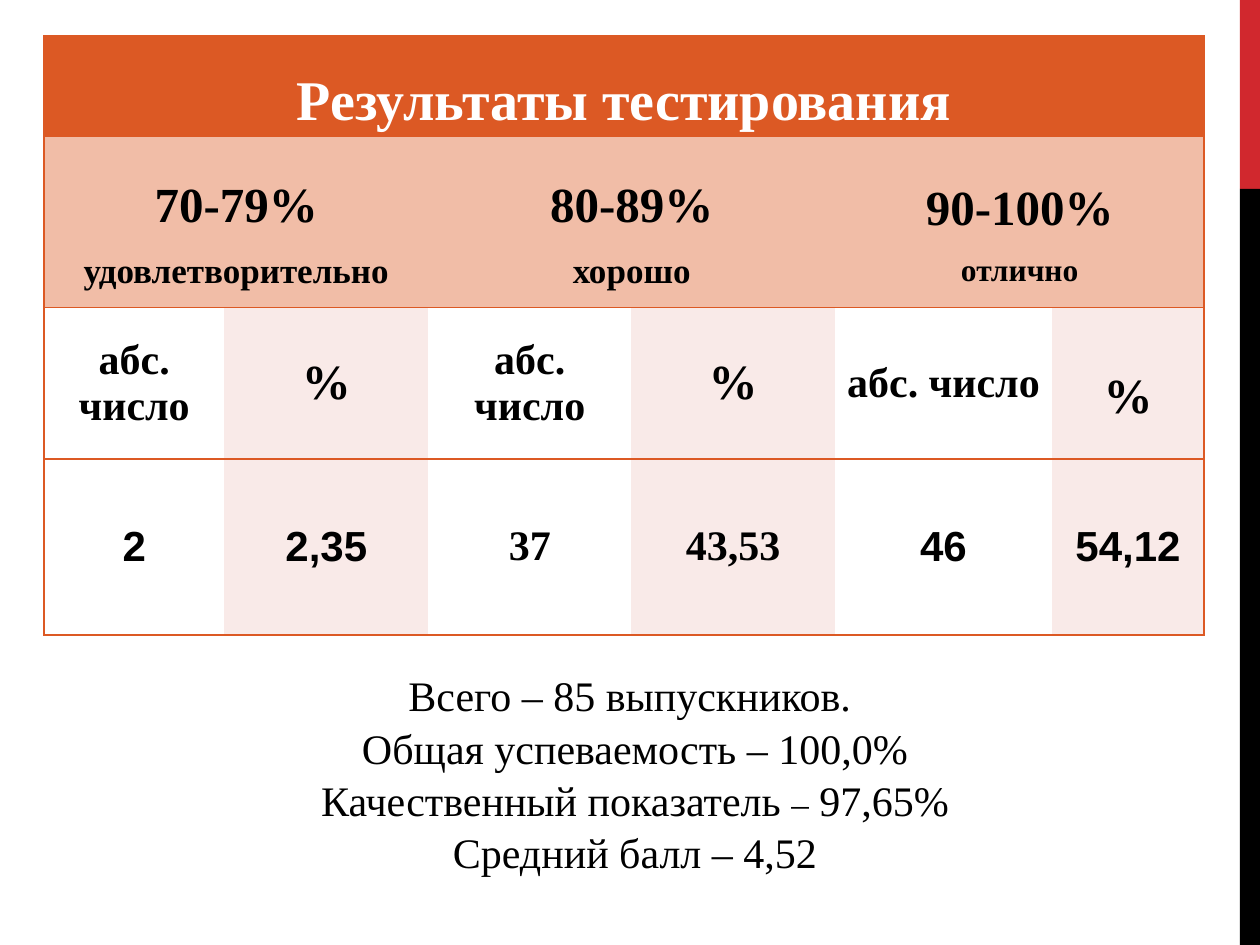
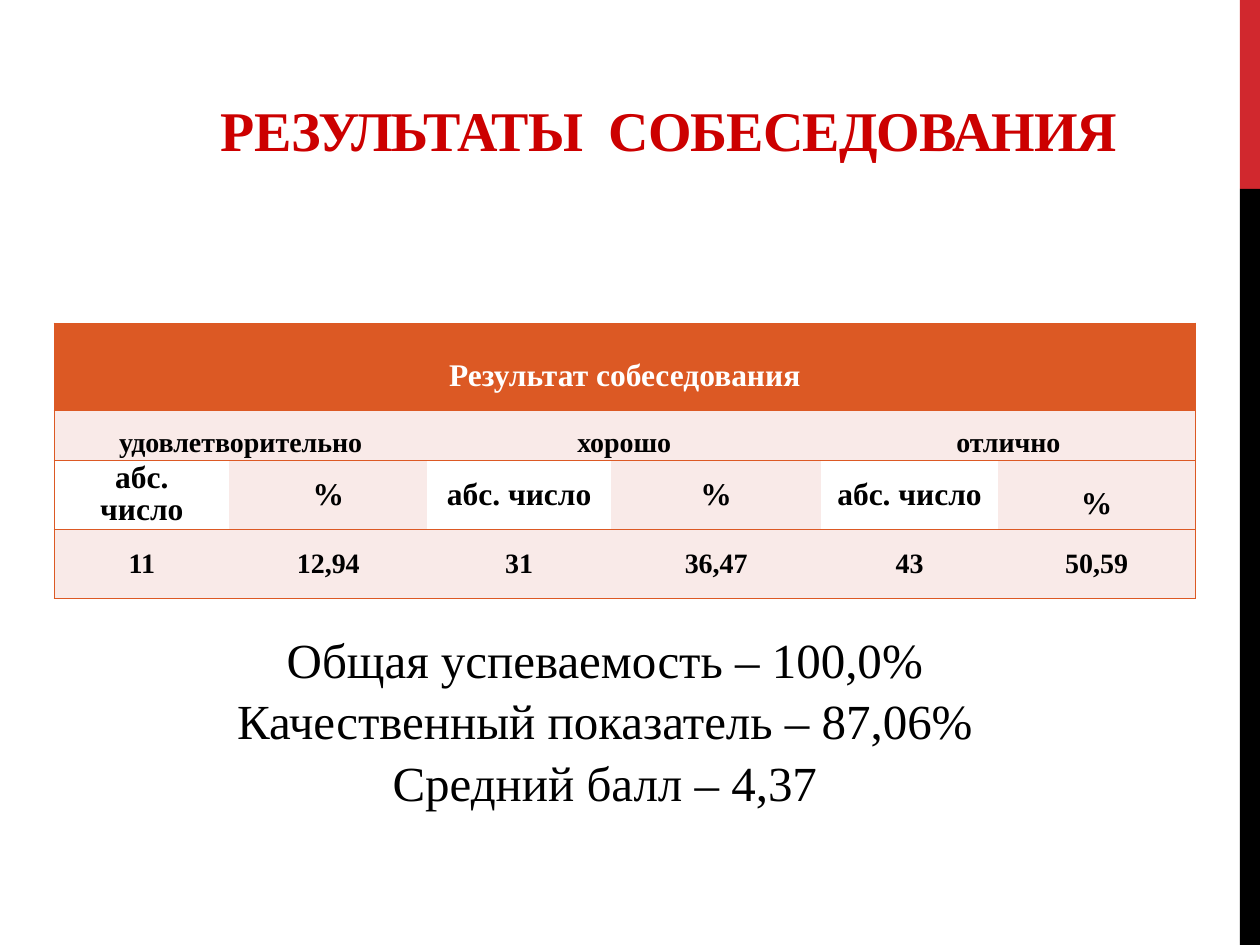
from dataclasses import dataclass

from lxml.etree import SubElement
from pptx import Presentation
from pptx.dml.color import RGBColor
from pptx.enum.shapes import MSO_SHAPE as Shape
from pptx.enum.text import MSO_ANCHOR as Anchor, PP_ALIGN as Align
from pptx.oxml.ns import qn
from pptx.util import Pt

SERIF, SANS = "Times New Roman", "Arial"
ORANGE, PEACH, PINK = "DC5924", "F1BDA7", "F9EAE8"
RED, TITLE_RED, BLACK, WHITE = "D1282E", "CC0000", "000000", "FFFFFF"


@dataclass(frozen=True)
class Span:
    text: str
    size: float
    font: str = SERIF
    color: str = BLACK
    bold: bool = True
    tracking: float = 0


@dataclass(frozen=True)
class Line:
    spans: tuple[Span, ...]
    spacing: float = 1.0


@dataclass(frozen=True)
class Cell:
    lines: tuple[Line, ...]
    fill: str
    width: int = 1


@dataclass(frozen=True)
class Band:
    top: float
    height: float
    color: str


@dataclass(frozen=True)
class ResultTable:
    left: float
    top: float
    columns: tuple[float, ...]
    heights: tuple[float, ...]
    inset: float
    rows: tuple[tuple[Cell, ...], ...]


BANDS = (Band(0, 108, RED), Band(108, 432, BLACK))


def rgb(color: str) -> RGBColor:
    return RGBColor.from_string(color)


def add_lines(frame, lines: tuple[Line, ...]) -> None:
    for index, line in enumerate(lines):
        para = frame.paragraphs[0] if index == 0 else frame.add_paragraph()
        para.alignment = Align.CENTER
        para.line_spacing = line.spacing
        for span in line.spans:
            run = para.add_run()
            run.text = span.text
            run.font.name = span.font
            run.font.size = Pt(span.size)
            run.font.bold = span.bold
            run.font.color.rgb = rgb(span.color)
            if span.tracking:
                run._r.get_or_add_rPr().set("spc", str(round(span.tracking * 100)))


def add_bands(page) -> None:
    for band in BANDS:
        box = page.shapes.add_shape(Shape.RECTANGLE, Pt(708.5), Pt(band.top), Pt(11.5), Pt(band.height))
        box.shadow.inherit = False
        box.fill.solid()
        box.fill.fore_color.rgb = rgb(band.color)
        box.line.fill.background()


def add_text(page, left: float, top: float, width: float, height: float,
             lines: tuple[Line, ...], anchor: Anchor = Anchor.TOP) -> None:
    frame = page.shapes.add_textbox(Pt(left), Pt(top), Pt(width), Pt(height)).text_frame
    frame.word_wrap = True
    frame.vertical_anchor = anchor
    add_lines(frame, lines)


def set_borders(cell, left: bool, right: bool) -> None:
    properties = cell._tc.get_or_add_tcPr()
    for side, shown in (("L", left), ("R", right), ("T", True), ("B", True)):
        border = SubElement(properties, qn(f"a:ln{side}"), w=str(Pt(1)))
        if shown:
            SubElement(SubElement(border, qn("a:solidFill")), qn("a:srgbClr"), val=ORANGE)
        else:
            SubElement(border, qn("a:noFill"))


def add_results(page, results: ResultTable) -> None:
    count = len(results.columns)
    table = page.shapes.add_table(
        len(results.rows), count, Pt(results.left), Pt(results.top),
        Pt(sum(results.columns)), Pt(sum(results.heights))).table
    for column, width in zip(table.columns, results.columns):
        column.width = Pt(width)
    for row_index, (height, row) in enumerate(zip(results.heights, results.rows)):
        table.rows[row_index].height = Pt(height)
        start = 0
        for content in row:
            end = start + content.width
            cell = table.cell(row_index, start)
            if content.width > 1:
                cell.merge(table.cell(row_index, end - 1))
            for position in range(start, end):
                part = table.cell(row_index, position)
                set_borders(part, start == 0, end == count)
                part.fill.solid()
                part.fill.fore_color.rgb = rgb(content.fill)
            cell.vertical_anchor = Anchor.MIDDLE
            cell.margin_left = cell.margin_right = Pt(results.inset)
            cell.margin_top = cell.margin_bottom = 0
            add_lines(cell.text_frame, content.lines)
            start = end


def bold(text: str, size: float, spacing: float = 1.0, font: str = SERIF, color: str = BLACK) -> Line:
    return Line((Span(text, size, font, color),), spacing)


def plain(text: str, size: float) -> Line:
    return Line((Span(text, size, bold=False),), 1.04)


def header(text: str, size: float) -> tuple[Cell, ...]:
    return (Cell((bold(text, size, 1.5, color=WHITE),), ORANGE, 6),)


def measures(count_size: float, percent_size: float, wrap_spacing: float) -> tuple[Cell, ...]:
    wrapped = tuple(bold(word, count_size, wrap_spacing) for word in ("абс.", "число"))
    count = Cell((bold("абс. число", count_size),), WHITE)
    percent = Cell((bold("%", percent_size),), PINK)
    last_percent = Cell((bold("%", percent_size, 1.5),), PINK)
    return Cell(wrapped, WHITE), percent, count, percent, count, last_percent


GRADES = ("удовлетворительно", "хорошо", "отлично")

TESTING = ResultTable(
    25.2, 20.6, (103, 116.6, 115.9, 116.6, 123.8, 87.1), (57.2, 97.8, 86.6, 100.6), 5.4,
    (
        header("Результаты тестирования", 32),
        tuple(Cell((bold(score, 28, 1.5), bold(grade, size, 1.5)), PEACH, 2)
              for score, grade, size in zip(("70-79%", "80-89%", "90-100%"), GRADES, (20, 20, 18))),
        measures(24, 28, 1.0),
        tuple(Cell((bold(value, 24, font=font),), fill) for value, font, fill in zip(
            ("2", "2,35", "37", "43,53", "46", "54,12"),
            (SANS, SANS, SERIF, SERIF, SANS, SANS), (WHITE, PINK) * 3)),
    ))

INTERVIEW = ResultTable(
    31, 184.8, (100.1, 113, 105.1, 120.2, 100.8, 113), (49.7, 26.8, 39.4, 39.4), 4.9,
    (
        header("Результат собеседования", 18),
        tuple(Cell((bold(grade, 16, 1.5),), PINK, 2) for grade in GRADES),
        measures(18, 18, 0.9),
        tuple(Cell((bold(value, 16),), PINK)
              for value in ("11", "12,94", "31", "36,47", "43", "50,59")),
    ))

TESTING_SUMMARY = (
    plain("Всего – 85 выпускников. ", 24),
    plain("Общая успеваемость – 100,0%", 24),
    Line(tuple(Span(text, size, bold=False) for text, size in (
        ("Качественный показатель ", 24), ("–", 20), (" 97,65%", 24))), 1.04),
    plain("Средний балл – 4,52", 24),
)

INTERVIEW_SUMMARY = tuple(plain(text, 28) for text in (
    "Общая успеваемость – 100,0%", "Качественный показатель – 87,06%", "Средний балл – 4,37"))

INTERVIEW_TITLE = (Line(tuple(
    Span(text, 32, color=TITLE_RED, tracking=tracking) for text, tracking in (
        ("РЕЗУЛЬТАТЫ", -0.6), (" ", 6.8), ("СОБЕСЕДОВАНИЯ", -0.6)))),)


def main() -> None:
    deck = Presentation()
    deck.slide_width, deck.slide_height = Pt(720), Pt(540)
    testing, interview = (deck.slides.add_slide(deck.slide_layouts[6]) for _ in range(2))
    for page in (testing, interview):
        add_bands(page)

    add_results(testing, TESTING)
    add_text(testing, 42.5, 378, 640.8, 128.2, TESTING_SUMMARY)

    add_text(interview, 61.9, 28.1, 640.8, 68.4, INTERVIEW_TITLE, Anchor.BOTTOM)
    add_results(interview, INTERVIEW)
    add_text(interview, 64.8, 355, 561.6, 109.4, INTERVIEW_SUMMARY)

    deck.save("out.pptx")


if __name__ == "__main__":
    main()
